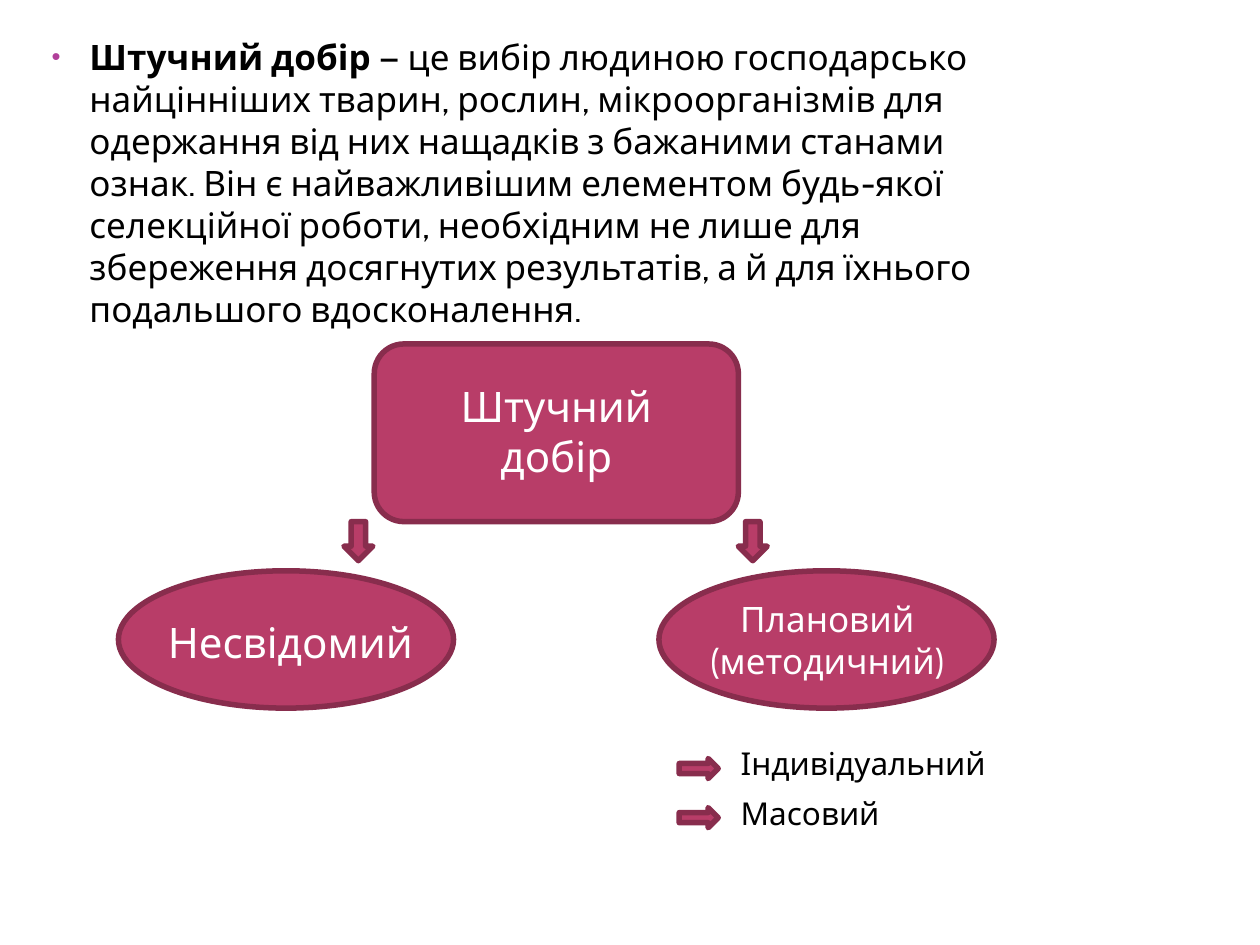
"""Build a slide defining artificial selection with a diagram of its kinds."""
import pptx
import pptx.util
import pptx.dml.color
import pptx.enum.shapes
import pptx.enum.text
import pptx.oxml
import pptx.oxml.ns

Inches, Pt = pptx.util.Inches, pptx.util.Pt
RGBColor = pptx.dml.color.RGBColor
MSO_SHAPE = pptx.enum.shapes.MSO_SHAPE
PP_ALIGN = pptx.enum.text.PP_ALIGN
MSO_AUTO_SIZE = pptx.enum.text.MSO_AUTO_SIZE

BLACK = RGBColor(0x00, 0x00, 0x00)
WHITE = RGBColor(0xFF, 0xFF, 0xFF)
BERRY = RGBColor(0xB8, 0x3D, 0x68)
DARK_BERRY = RGBColor(0x88, 0x2D, 0x4D)
PURPLE = RGBColor(0xB1, 0x3F, 0x9A)


class SlideBuilder:
    font = "Cabin"
    line_width = Pt(3.15)

    def __init__(self, prs):
        self.s = prs.slides.add_slide(prs.slide_layouts[1])
        title = self.s.shapes.title
        title.element.getparent().remove(title.element)

    def run(self, p, text, **fmt):
        r = p.add_run()
        r.text = text
        color = fmt.pop("color", BLACK)
        for key, value in {"name": self.font, **fmt}.items():
            setattr(r.font, key, value)
        r.font.color.rgb = color

    def bullet(self, p, color, percent, indent):
        pPr = p._p.get_or_add_pPr()
        pPr.set("marL", str(indent))
        pPr.set("indent", str(-indent))
        ns = pptx.oxml.ns.nsdecls("a")
        for xml in (
            f'<a:buClr {ns}><a:srgbClr val="{color}"/></a:buClr>',
            f'<a:buSzPct {ns} val="{percent * 1000}"/>',
            f'<a:buFont {ns} typeface="Arial"/>',
            f'<a:buChar {ns} char="•"/>',
        ):
            pPr.append(pptx.oxml.parse_xml(xml))

    def body(self, box, term, definition):
        sp = self.s.placeholders[1]
        for key, value in zip(("left", "top", "width", "height"), box):
            setattr(sp, key, Inches(value))
        tf = sp.text_frame
        tf.auto_size = MSO_AUTO_SIZE.NONE
        p = tf.paragraphs[0]
        self.bullet(p, PURPLE, 73, Inches(0.3))
        p.space_before = Pt(0)
        self.run(p, term, size=Pt(20), bold=True)
        self.run(p, definition, size=Pt(20), bold=False)

    def shape(self, kind, *box):
        sp = self.s.shapes.add_shape(kind, *map(Inches, box))
        sp.shadow.inherit = False
        sp.fill.solid()
        sp.fill.fore_color.rgb = BERRY
        sp.line.color.rgb = DARK_BERRY
        sp.line.width = self.line_width

    def label(self, text, box, size, color=WHITE, align=PP_ALIGN.CENTER):
        tf = self.s.shapes.add_textbox(*map(Inches, box)).text_frame
        tf.word_wrap = True
        tf.auto_size = MSO_AUTO_SIZE.SHAPE_TO_FIT_TEXT
        p = tf.paragraphs[0]
        p.alignment = align
        self.run(p, text, size=Pt(size), color=color)


def main():
    prs = pptx.Presentation()
    prs.slide_width, prs.slide_height = Inches(10), Inches(7.5)
    b = SlideBuilder(prs)

    b.body(
        (0.31, 0.23, 7.92, 5.3),
        "Штучний добір ",
        "— це вибір людиною господарсько найцінніших тварин, рослин, "
        "мікроорганізмів для одержання від них нащадків з бажаними станами "
        "ознак. Він є найважливішим елементом будь-якої селекційної роботи, "
        "необхідним не лише для збереження досягнутих результатів, а й для "
        "їхнього подальшого вдосконалення.",
    )

    b.shape(MSO_SHAPE.ROUNDED_RECTANGLE, 2.97, 2.73, 2.89, 1.41)
    for left in (0.94, 5.23):
        b.shape(MSO_SHAPE.OVAL, left, 4.53, 2.66, 1.09)
    for left in (2.73, 5.86):
        b.shape(MSO_SHAPE.DOWN_ARROW, left, 4.14, 0.23, 0.31)

    b.label("Штучний добір", (3.36, 2.97, 2.11, 0.91), 24)
    b.label("Несвідомий", (1.17, 4.84, 2.27, 0.5), 24)
    b.label("Плановий (методичний)", (5.47, 4.69, 2.19, 0.77), 20)

    for i, method in enumerate(("Індивідуальний", "Масовий")):
        top = 5.86 + 0.39 * i
        b.shape(MSO_SHAPE.RIGHT_ARROW, 5.39, top + 0.16, 0.31, 0.16)
        b.label(method, (5.78, top, 2.5, 0.4), 18, BLACK, PP_ALIGN.LEFT)

    prs.save("out.pptx")


if __name__ == "__main__":
    main()
